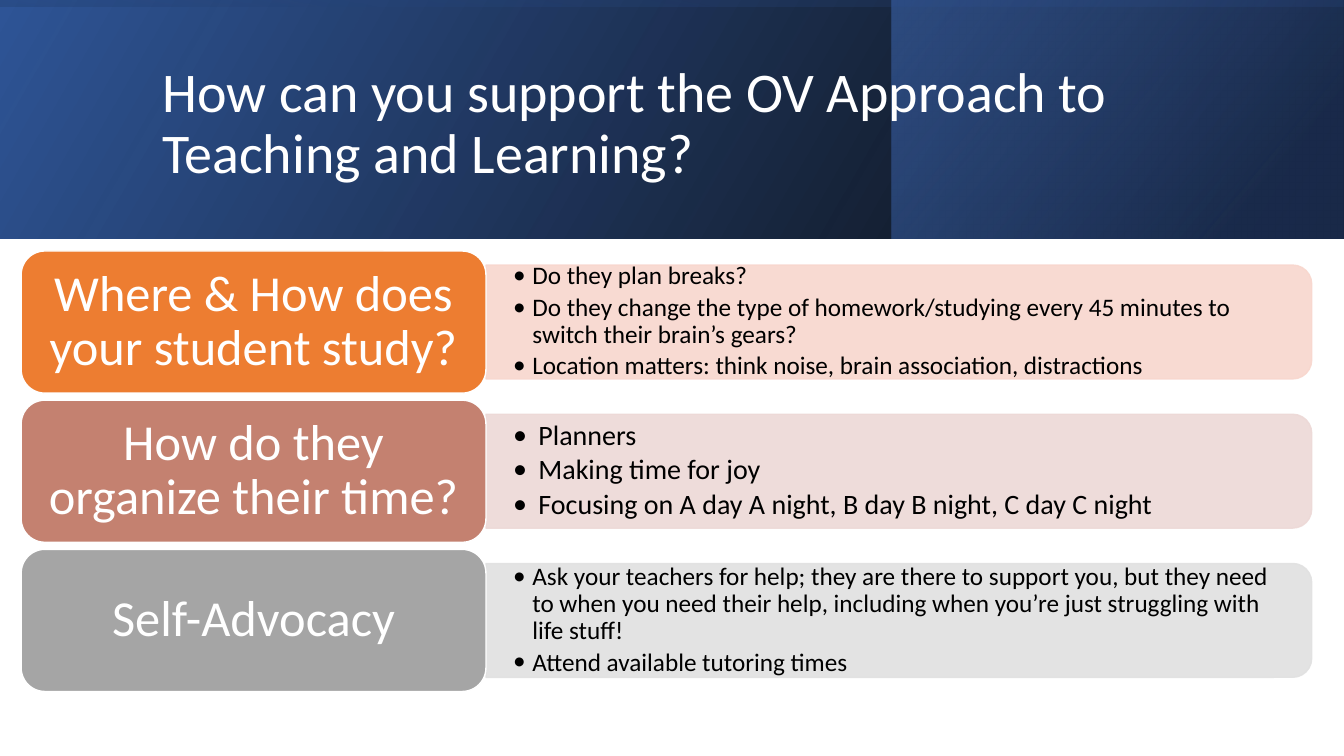
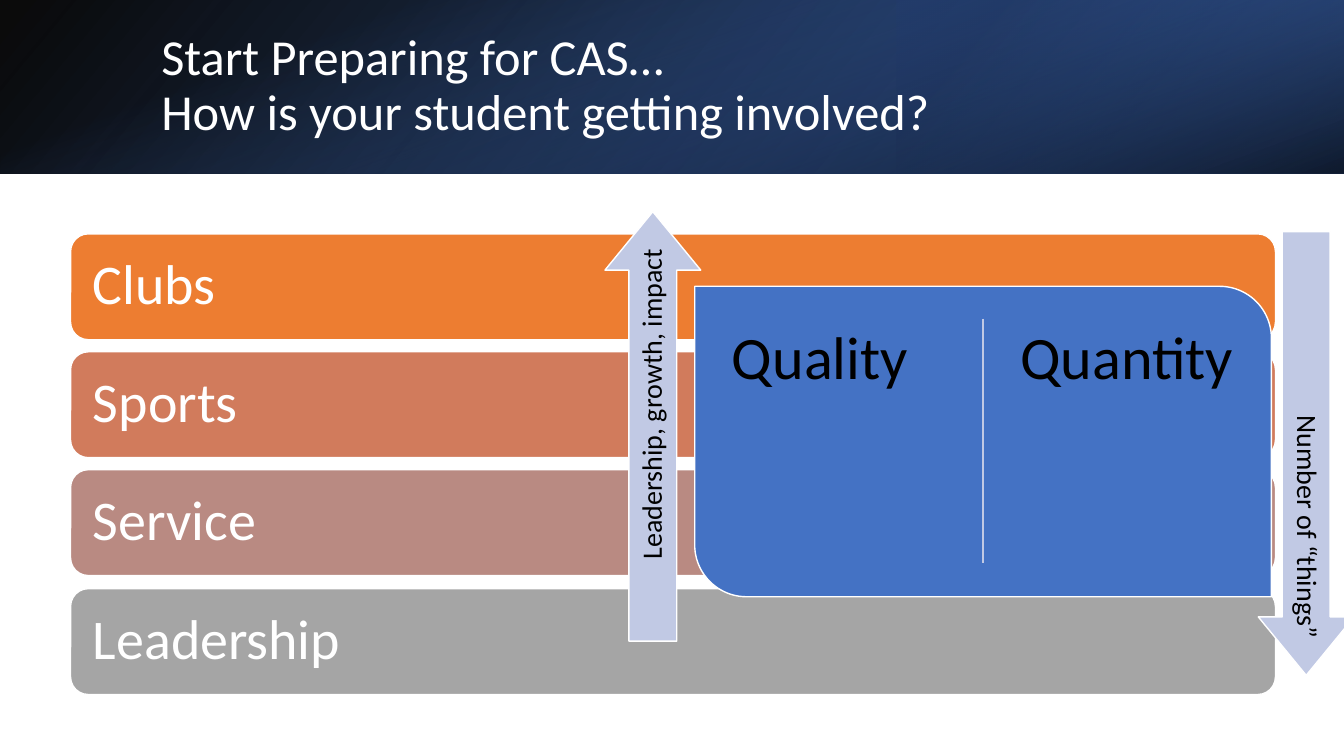
from lxml.etree import SubElement
from pptx import Presentation
from pptx.dml.color import RGBColor
from pptx.enum.shapes import MSO_CONNECTOR, MSO_SHAPE
from pptx.enum.text import MSO_ANCHOR, MSO_AUTO_SIZE, PP_ALIGN
from pptx.oxml.ns import qn
from pptx.util import Pt

EMU_PER_PX = 9144
SLIDE_WIDTH, SLIDE_HEIGHT = 1333, 750
FONT = "Calibri"
WHITE, BLACK = "FFFFFF", "000000"
NAVY, DEEP_NAVY, BLUE, PALE_BLUE = "2F5597", "203864", "4472C4", "C1C9E4"
ORANGE, GRAY = "ED7D31", "A5A5A5"

STUDY_ROWS = [
    ("Where & How does your student study?", ORANGE, "F8D7CE", 18, 19, [
        "Do they plan breaks?",
        "Do they change the type of homework/studying every 45 minutes to "
        "switch their brain’s gears?",
        "Location matters: think noise, brain association, distractions",
    ]),
    ("How do they organize their time?", "C48170", "EDD9D7", 20, 25, [
        "Planners",
        "Making time for joy",
        "Focusing on A day A night, B day B night, C day C night",
    ]),
    ("Self-Advocacy", GRAY, "E1E1E1", 18, 19, [
        "Ask your teachers for help; they are there to support you, but they need "
        "to when you need their help, including when you’re just struggling with "
        "life stuff!",
        "Attend available tutoring times",
    ]),
]
ACTIVITIES = [("Clubs", ORANGE), ("Sports", "D17B5C"),
              ("Service", "B98A82"), ("Leadership", GRAY)]


def px(length):
    """Turn a length in px into EMU."""
    return round(length * EMU_PER_PX)


def color(value):
    """Turn a hex string into a colour."""
    return RGBColor.from_string(value)


def set_opacity(shape, *percentages):
    """Set the opacity of each colour of a shape, in drawing order."""
    colors = list(shape.element.spPr.iter(qn("a:srgbClr")))
    for element, percentage in zip(colors, percentages):
        SubElement(element, qn("a:alpha"), val=str(percentage * 1000))


def add_preset(slide, preset, box, fill=None, line=None, rotation=0, adjustments=()):
    """Add a preset shape that covers the box once it is rotated."""
    left, top, width, height = box
    if rotation in (90, 270):
        left, top = left + (width - height) / 2, top + (height - width) / 2
        width, height = height, width
    shape = slide.shapes.add_shape(preset, px(left), px(top), px(width), px(height))
    shape.rotation = rotation
    shape.shadow.inherit = False
    for index, adjustment in enumerate(adjustments):
        shape.adjustments[index] = adjustment
    if fill:
        shape.fill.solid()
        shape.fill.fore_color.rgb = color(fill)
    if line:
        shape.line.color.rgb = color(line)
        shape.line.width = Pt(1)
    else:
        shape.line.fill.background()
    return shape


def add_band(slide, box, angle, stops, rotation=0, flipped=True):
    """Add a gradient band from (position, colour, opacity) stops."""
    band = add_preset(slide, MSO_SHAPE.RECTANGLE, box, rotation=rotation)
    if flipped:
        band.element.spPr.find(qn("a:xfrm")).set("flipH", "1")
    band.fill.gradient()
    band.fill.gradient_angle = 360 - angle
    for gradient_stop, (position, value, _) in zip(band.fill.gradient_stops, stops):
        gradient_stop.position = position / 100
        gradient_stop.color.rgb = color(value)
    set_opacity(band, *(opacity for _, _, opacity in stops))


def format_frame(frame, insets, anchor=MSO_ANCHOR.MIDDLE):
    """Set wrapping, anchor and the horizontal and vertical insets."""
    horizontal, vertical = insets
    frame.word_wrap = True
    frame.auto_size = MSO_AUTO_SIZE.NONE
    frame.vertical_anchor = anchor
    frame.margin_left = frame.margin_right = px(horizontal)
    frame.margin_top = frame.margin_bottom = px(vertical)


def write(paragraph, text, size, value, alignment=PP_ALIGN.LEFT):
    """Write the lines of a paragraph as runs."""
    paragraph.alignment = alignment
    paragraph.line_spacing = 0.9
    for index, line in enumerate(text.split("\n")):
        if index:
            paragraph.add_line_break()
        run = paragraph.add_run()
        run.text = line
        run.font.name = FONT
        run.font.size = Pt(size)
        run.font.color.rgb = color(value)


def add_title(slide, text, box, size):
    """Fill the title placeholder and raise it above the bands."""
    title = slide.shapes.title
    title.left, title.top, title.width, title.height = map(px, box)
    format_frame(title.text_frame, (10, 5))
    write(title.text_frame.paragraphs[0], text, size, WHITE)
    title.element.getparent().append(title.element)


def add_text_box(slide, box, insets, anchor):
    """Add an empty text box and return its text frame."""
    frame = slide.shapes.add_textbox(*map(px, box)).text_frame
    format_frame(frame, insets, anchor)
    return frame


def add_bullets(slide, box, items, size, indent):
    """Add a bulleted list."""
    frame = add_text_box(slide, box, (27, 14), MSO_ANCHOR.MIDDLE)
    for index, item in enumerate(items):
        paragraph = frame.paragraphs[0] if index == 0 else frame.add_paragraph()
        write(paragraph, item, size, BLACK)
        paragraph.space_after = Pt(3)
        properties = paragraph._p.get_or_add_pPr()
        properties.set("marL", str(px(indent)))
        properties.set("indent", str(-px(indent)))
        SubElement(properties, qn("a:buFont"), typeface=FONT)
        SubElement(properties, qn("a:buChar"), char="•")


def add_card(slide, box, fill, text, size, insets, alignment=PP_ALIGN.LEFT):
    """Add a rounded card with white text."""
    card = add_preset(slide, MSO_SHAPE.ROUNDED_RECTANGLE, box, fill, WHITE)
    format_frame(card.text_frame, insets)
    write(card.text_frame.paragraphs[0], text, size, WHITE, alignment)


def add_study_row(slide, top, row):
    """Add a question card with its panel of answers."""
    question, fill, panel_fill, size, indent, items = row
    panel = add_preset(slide, MSO_SHAPE.ROUND_2_SAME_RECTANGLE, (482, top + 14, 819, 113),
                       panel_fill, panel_fill, rotation=90)
    set_opacity(panel, 90, 90)
    add_bullets(slide, (482, top + 19, 813, 102), items, size, indent)
    add_card(slide, (21, top, 461, 141), fill, question, 36, (15, 7), PP_ALIGN.CENTER)


def add_arrow(slide, box, rotation, text):
    """Add a vertical arrow with text that runs towards its tip."""
    arrow = add_preset(slide, MSO_SHAPE.RIGHT_ARROW, box, PALE_BLUE, WHITE,
                       rotation, (0.5, 0.61))
    format_frame(arrow.text_frame, (8, 0))
    write(arrow.text_frame.paragraphs[0], text, 20, BLACK, PP_ALIGN.RIGHT)


def add_divider(slide, x, top, bottom):
    """Add a thin vertical line."""
    divider = slide.shapes.add_connector(MSO_CONNECTOR.STRAIGHT, px(x), px(top),
                                         px(x), px(bottom))
    divider.line.color.rgb = color(PALE_BLUE)
    divider.line.width = Pt(1)
    SubElement(divider.element.spPr, qn("a:effectLst"))


def add_comparison(slide):
    """Add the two-column panel of quality and quantity."""
    add_preset(slide, MSO_SHAPE.ROUND_2_DIAG_RECTANGLE, (689, 284, 572, 308),
               BLUE, WHITE, adjustments=(0, 0.167))
    add_divider(slide, 975, 316, 559)
    for left, heading in ((708, "Quality"), (994, "Quantity")):
        frame = add_text_box(slide, (left, 307, 248, 261), (18, 18), MSO_ANCHOR.TOP)
        write(frame.paragraphs[0], heading, 43, BLACK)


def build_support_slide(slide):
    """Build the slide on supporting the approach."""
    header = (0, 0, SLIDE_WIDTH, 237)
    add_band(slide, header, 330, [(0, BLACK, 96), (100, NAVY, 100)])
    add_band(slide, (884, 0, 448, 237), 320, [(19, DEEP_NAVY, 68), (100, BLUE, 48)])
    add_band(slide, header, 350, [(23, NAVY, 16), (99, BLACK, 45)], 270)
    add_title(slide, "How can you support the OV Approach to Teaching and Learning?",
              (151, 38, 1063, 172), 40)
    for index, row in enumerate(STUDY_ROWS):
        add_study_row(slide, 249 + index * 148, row)


def build_involvement_slide(slide):
    """Build the slide on getting involved."""
    header = (0, 0, SLIDE_WIDTH, 172)
    add_band(slide, header, 140, [(0, BLACK, 96), (100, NAVY, 100)])
    add_band(slide, (889, 0, 444, 172), 320, [(19, DEEP_NAVY, 68), (100, BLUE, 79)], 180)
    add_band(slide, header, 340, [(23, BLUE, 0), (99, BLACK, 74)], 90, flipped=False)
    add_title(slide, "Start Preparing for CAS…\nHow is your student getting involved?",
              (150, 38, 1098, 96), 36)
    for index, (activity, fill) in enumerate(ACTIVITIES):
        top = 232 + index * 352 // 3
        add_card(slide, (70, top, 1195, 105), fill, activity, 40, (17, 17))
    add_comparison(slide)
    add_arrow(slide, (600, 210, 95, 426), 270, "Leadership, growth, impact")
    add_arrow(slide, (1248, 230, 95, 440), 90, "Number of “things”")


def main():
    """Build and save the presentation."""
    presentation = Presentation()
    presentation.slide_width = px(SLIDE_WIDTH)
    presentation.slide_height = px(SLIDE_HEIGHT)
    title_only = presentation.slide_layouts[5]
    for build in (build_support_slide, build_involvement_slide):
        build(presentation.slides.add_slide(title_only))
    presentation.save("out.pptx")


if __name__ == "__main__":
    main()
